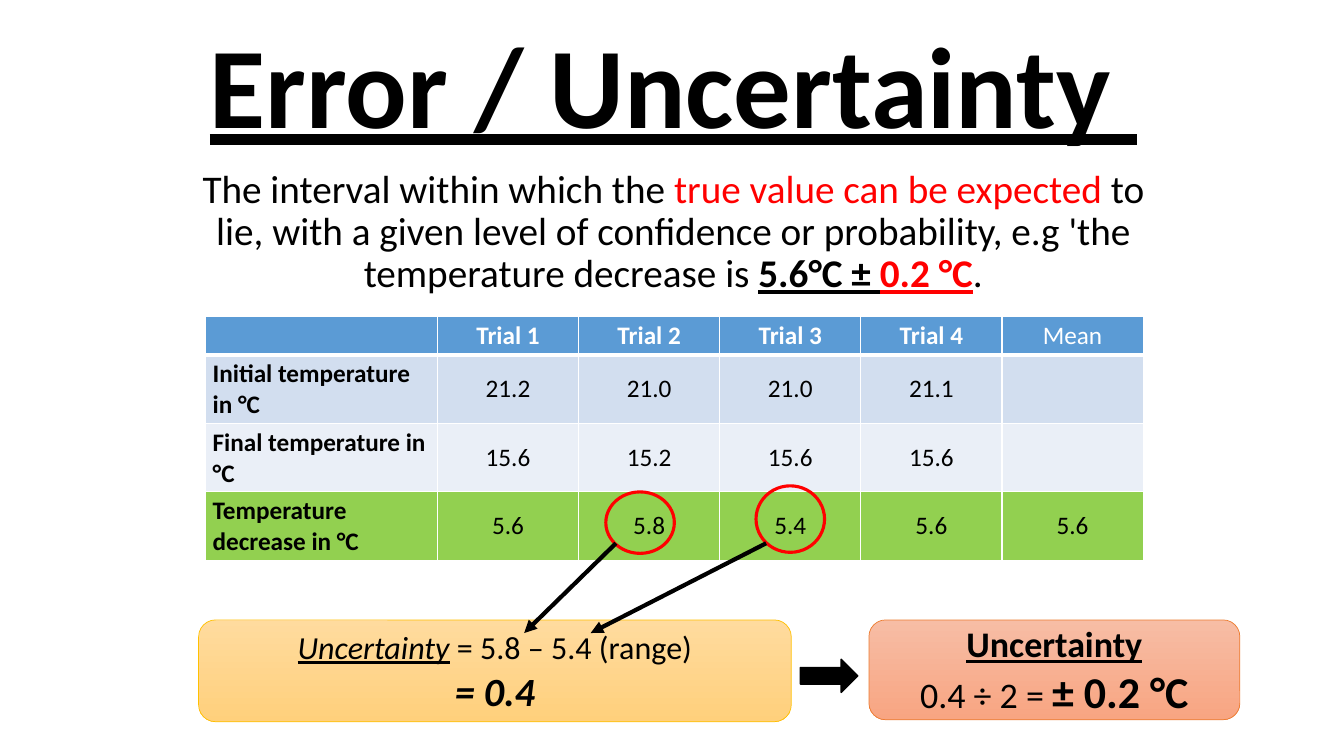
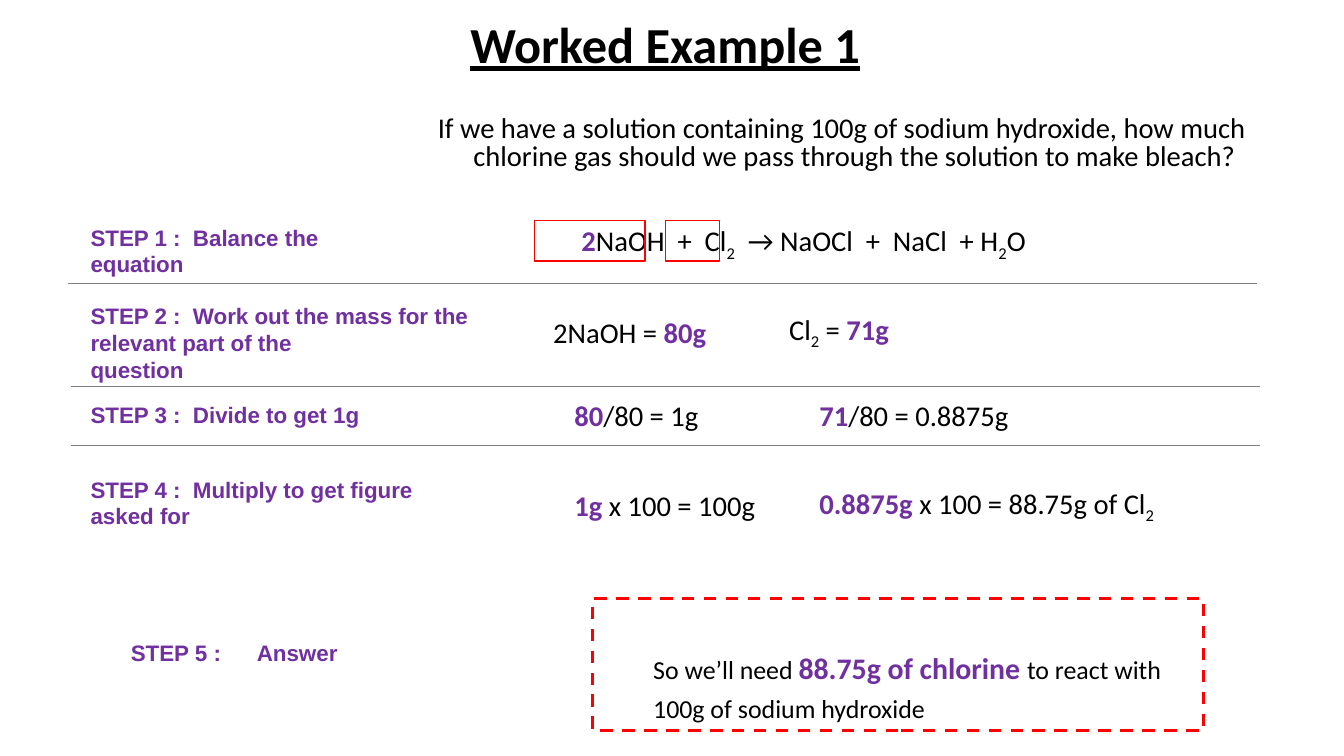
from dataclasses import dataclass
from pptx import Presentation
from pptx.util import Inches, Pt
from pptx.dml.color import RGBColor
from pptx.enum.dml import MSO_LINE_DASH_STYLE as DASH
from pptx.enum.shapes import MSO_CONNECTOR, MSO_SHAPE as SHAPE
from pptx.enum.text import MSO_ANCHOR as ANCHOR, PP_ALIGN as ALIGN
from pptx.oxml.ns import qn
from lxml.etree import SubElement


@dataclass(frozen=True)
class Theme:
    cell: float = 0.1  # grid unit in inches
    font: str = "Calibri"
    step_font: str = "Arial"
    ink: str = "000000"
    white: str = "FFFFFF"
    red: str = "FF0000"
    purple: str = "7030A0"
    rule: str = "7F7F7F"
    header: str = "5B9BD5"
    rows: tuple = ("D2DEEF", "EAEFF7", "92D050")
    gold: tuple = ("FFDB9E", "FFD07C", "FFC000")
    coral: tuple = ("F7BDA5", "F8A582", "ED7D31")
    banner: float = 82
    title: float = 36
    lead: float = 28
    table: float = 18
    working: float = 20.4
    step: float = 16
    answer: float = 18.5


T = Theme()
PAGE = (0, 0, 133.33, 75)
KEY = {"bold": True, "color": T.purple}
HEAD = {"bold": True, "underline": True}
SUB = {"baseline": "-25000"}


# Grid and text helpers
def rgb(value):
    return RGBColor.from_string(value)


def grid(*cells):
    return [Inches(c * T.cell) for c in cells]


def inside(box, x, y, w, h):
    return box[0] + x, box[1] + y, w, h


def set_font(r, fmt):
    for name, value in fmt.items():
        if name == "color":
            r.font.color.rgb = rgb(value)
        elif name == "size":
            r.font.size = Pt(value)
        elif name == "baseline":
            r.font._element.set("baseline", value)
        else:
            setattr(r.font, name, value)


def write(tf, paras, base, para=None, frame=None):
    """Each paragraph is a list of strings or (text, format) pairs; "\\n" breaks the line."""
    for name, value in {"word_wrap": True, **(frame or {})}.items():
        setattr(tf, name, value)
    for i, runs in enumerate(paras):
        p = tf.add_paragraph() if i else tf.paragraphs[0]
        for name, value in (para or {}).items():
            setattr(p, name, value)
        for run in runs:
            if run == "\n":
                p.add_line_break()
                continue
            text, fmt = (run, {}) if isinstance(run, str) else run
            r = p.add_run()
            r.text = text
            set_font(r, {"name": T.font, "color": T.ink, **base, **fmt})


def label(s, box, paras, base, para=None, anchor=ANCHOR.TOP):
    tf = s.shapes.add_textbox(*grid(*box)).text_frame
    write(tf, paras, base, para, {"vertical_anchor": anchor})
    return tf


def title(s, box, text, size):
    label(s, box, [[text]], {"size": size, **HEAD},
          {"alignment": ALIGN.CENTER, "line_spacing": 0.9}, ANCHOR.MIDDLE)


# Shape helpers
def shape(s, kind, box, line, width, fill=None):
    sp = s.shapes.add_shape(kind, *grid(*box))
    sp.shadow.inherit = False
    sp.line.color.rgb = rgb(line)
    sp.line.width = Pt(width)
    if fill is None:
        sp.fill.background()
    elif isinstance(fill, str):
        sp.fill.solid()
        sp.fill.fore_color.rgb = rgb(fill)
    else:
        sp.fill.gradient()
        sp.fill.gradient_angle = 270
        for stop, position, color in zip(sp.fill.gradient_stops, (0, 1), fill):
            stop.position = position
            stop.color.rgb = rgb(color)
    return sp


def line(s, start, end, color, width, arrow=False):
    c = s.shapes.add_connector(MSO_CONNECTOR.STRAIGHT, *grid(*start, *end))
    c.line.color.rgb = rgb(color)
    c.line.width = Pt(width)
    if arrow:
        SubElement(c.line._get_or_add_ln(), qn("a:tailEnd"), type="triangle")
    SubElement(c._element.spPr, qn("a:effectLst"))


# Uncertainty slide
TRIALS = [
    ["", "Trial 1", "Trial 2", "Trial 3", "Trial 4", "Mean"],
    ["Initial temperature in °C", "21.2", "21.0", "21.0", "21.1", ""],
    ["Final temperature in °C", "15.6", "15.2", "15.6", "15.6", ""],
    ["Temperature decrease in °C", "5.6", "5.8", "5.4", "5.6", "5.6"],
]


def cell_borders(cell, header):
    tcPr = cell._tc.get_or_add_tcPr()
    for side in "LRTB":
        width = 3 if header and side == "B" else 1
        ln = SubElement(tcPr, qn("a:ln" + side), w=str(Pt(width)))
        SubElement(SubElement(ln, qn("a:solidFill")), qn("a:srgbClr"), val=T.white)


def trials_table(s, box):
    tbl = s.shapes.add_table(len(TRIALS), len(TRIALS[0]), *grid(*box)).table
    for i, column in enumerate(tbl.columns):
        column.width = grid(14 if i else 23)[0]
    for i, row in enumerate(tbl.rows):
        row.height = grid(6.8 if i else 3.7)[0]
    margins = dict(zip(("margin_left", "margin_top", "margin_right", "margin_bottom"),
                       grid(0.7, 0.4, 0.7, 0.4)))
    for i, values in enumerate(TRIALS):
        for j, value in enumerate(values):
            cell = tbl.cell(i, j)
            cell_borders(cell, i == 0)
            cell.fill.solid()
            cell.fill.fore_color.rgb = rgb(T.rows[i - 1] if i else T.header)
            for name, inset in margins.items():
                setattr(cell, name, inset)
            cell.vertical_anchor = ANCHOR.MIDDLE if i and j else ANCHOR.TOP
            fmt = {"size": T.table, "color": T.ink if i else T.white,
                   "bold": j == 0 or (i == 0 and value != "Mean")}
            write(cell.text_frame, [[value]] if value else [], fmt,
                  {"alignment": ALIGN.CENTER if j else ALIGN.LEFT})


def result_box(s, box, colors, paras, size):
    sp = shape(s, SHAPE.ROUNDED_RECTANGLE, box, colors[2], 0.5, colors[:2])
    write(sp.text_frame, paras, {"size": size}, {"alignment": ALIGN.CENTER},
          {"vertical_anchor": ANCHOR.MIDDLE})


def range_working(s, box):
    result_box(s, inside(box, 0, 0, 58.8, 10.1), T.gold, [
        [("Uncertainty", {"italic": True, "underline": True}), " = 5.8 – 5.4 (range)"],
        [("= 0.4", {"size": 28.6, "bold": True, "italic": True})]], 22.9)
    result_box(s, inside(box, 66.5, 0, 36.8, 9.9), T.coral, [
        [("Uncertainty", HEAD)],
        ["0.4 ÷ 2 = ", ("± 0.2 °C", {"size": 31.4, "bold": True})]], 25.7)
    shape(s, SHAPE.RIGHT_ARROW, inside(box, 59.7, 3.9, 5.7, 3.3), T.ink, 1, T.ink)


def extremes(s, box):
    for x, y, h, start, end in ((0, 0.6, 6.1, 1, -8.1), (14.9, 0, 6.6, 15.9, -1.5)):
        shape(s, SHAPE.OVAL, inside(box, x, y, 6.8, h), T.red, 2.25)
        line(s, (box[0] + start, box[1] + 5.7), (box[0] + end, box[1] + 14.6),
             T.ink, 3, True)


def uncertainty_slide(s, box):
    title(s, inside(box, 18.2, 1.8, 97.2, 14.5), "Error / Uncertainty ", T.banner)
    red = {"color": T.red}
    label(s, inside(box, 18.8, 16.3, 96, 14), [[
        "The interval within which the ", ("true value can be expected", red),
        " to lie, with a given level of confidence or probability, "
        "e.g 'the temperature decrease is ",
        ("5.6°C ± ", HEAD), ("0.2 °C", {**HEAD, **red}), "."]],
        {"size": T.lead}, {"alignment": ALIGN.CENTER, "line_spacing": 0.9})
    trials_table(s, inside(box, 20.4, 31.4, 93, 24.1))
    range_working(s, inside(box, 19.7, 61.5, 103.3, 10.1))
    extremes(s, inside(box, 60.1, 48.2, 21.7, 6.6))


# Worked example slide
STEPS = [  # top, height, text
    (21.7, 6.4, ["STEP 1 :  Balance the", "\n", "equation"]),
    (29.5, 9.1, ["STEP 2 :  Work out the mass for the", "\n", "relevant part of the",
                 "\n", "question"]),
    (39.3, 3.7, ["STEP 3 :  Divide to get 1g"]),
    (46.7, 6.4, ["STEP 4 :  Multiply to get figure", "\n", "asked for"]),
]
WORKINGS = [  # left, middle, runs
    (56.7, 24.1, [("2", KEY), "NaOH  +  Cl", ("2", SUB), "  → NaOCl  +  NaCl  + H",
                  ("2", SUB), "O"]),
    (53.9, 32.9, ["2NaOH = ", ("80g", KEY)]),
    (77.3, 32.9, ["Cl", ("2", SUB), " = ", ("71g", KEY)]),
    (56, 41.2, [("80", KEY), "/80 = 1g"]),
    (80.3, 41.2, [("71", KEY), "/80 = 0.8875g"]),
    (56, 50.1, [("1g", KEY), " x 100 = 100g"]),
    (80.3, 50.1, [("0.8875g", KEY), " x 100 = 88.75g of Cl", ("2", SUB)]),
]


def question(s, box):
    tf = label(s, box, [["If we have a solution containing 100g of sodium hydroxide, how much "
                         "chlorine gas should we pass through the solution to make bleach?"]],
               {"size": T.working}, {"alignment": ALIGN.CENTER, "line_spacing": 0.8})
    pPr = tf.paragraphs[0]._p.get_or_add_pPr()
    pPr.set("marL", str(Inches(0.25)))
    pPr.set("indent", str(-Inches(0.25)))


def steps(s, box):
    fmt = {"size": T.step, "name": T.step_font, **KEY}
    for top, height, runs in STEPS:
        label(s, inside(box, 8, top, 41, height), [runs], fmt)
    for left, text in ((12, "STEP 5 :"), (24.5, "Answer")):
        label(s, inside(box, left, 62.9, 12, 3.7), [[text]], fmt)
    for left, y in ((6.7, 28.1), (7, 38.3), (7, 44.2)):
        line(s, (box[0] + left, box[1] + y), (box[0] + left + 118, box[1] + y), T.rule, 0.5)


def workings(s, box):
    for left, middle, runs in WORKINGS:
        label(s, inside(box, left, middle - 2, 50, 4), [runs],
              {"size": T.working}, anchor=ANCHOR.MIDDLE)
    for left, width in ((53, 11), (66, 5.4)):
        shape(s, SHAPE.RECTANGLE, inside(box, left, 21.9, width, 4), T.red, 1)


def answer(s, box):
    sp = shape(s, SHAPE.RECTANGLE, box, T.red, 2.25)
    sp.line.dash_style = DASH.DASH
    write(sp.text_frame, [
        ["So we’ll need ", ("88.75g of chlorine ", {"size": 21.3, **KEY}), "to react with"],
        ["100g of sodium hydroxide"]], {"size": T.answer},
        {"alignment": ALIGN.LEFT, "line_spacing": 0.8, "space_before": Pt(10)},
        {"vertical_anchor": ANCHOR.BOTTOM, "margin_left": Inches(0.6),
         "margin_bottom": Inches(0.07)})


def example_slide(s, box):
    title(s, inside(box, 21, 0, 90, 9.3), "Worked Example 1", T.title)
    question(s, inside(box, 37.8, 11.1, 91.4, 7))
    steps(s, box)
    workings(s, box)
    answer(s, inside(box, 58.8, 59.4, 60.6, 13.1))


def main():
    prs = Presentation()
    prs.slide_width, prs.slide_height = grid(*PAGE[2:])
    for build in (uncertainty_slide, example_slide):
        build(prs.slides.add_slide(prs.slide_layouts[6]), PAGE)
    prs.save("out.pptx")


if __name__ == "__main__":
    main()
